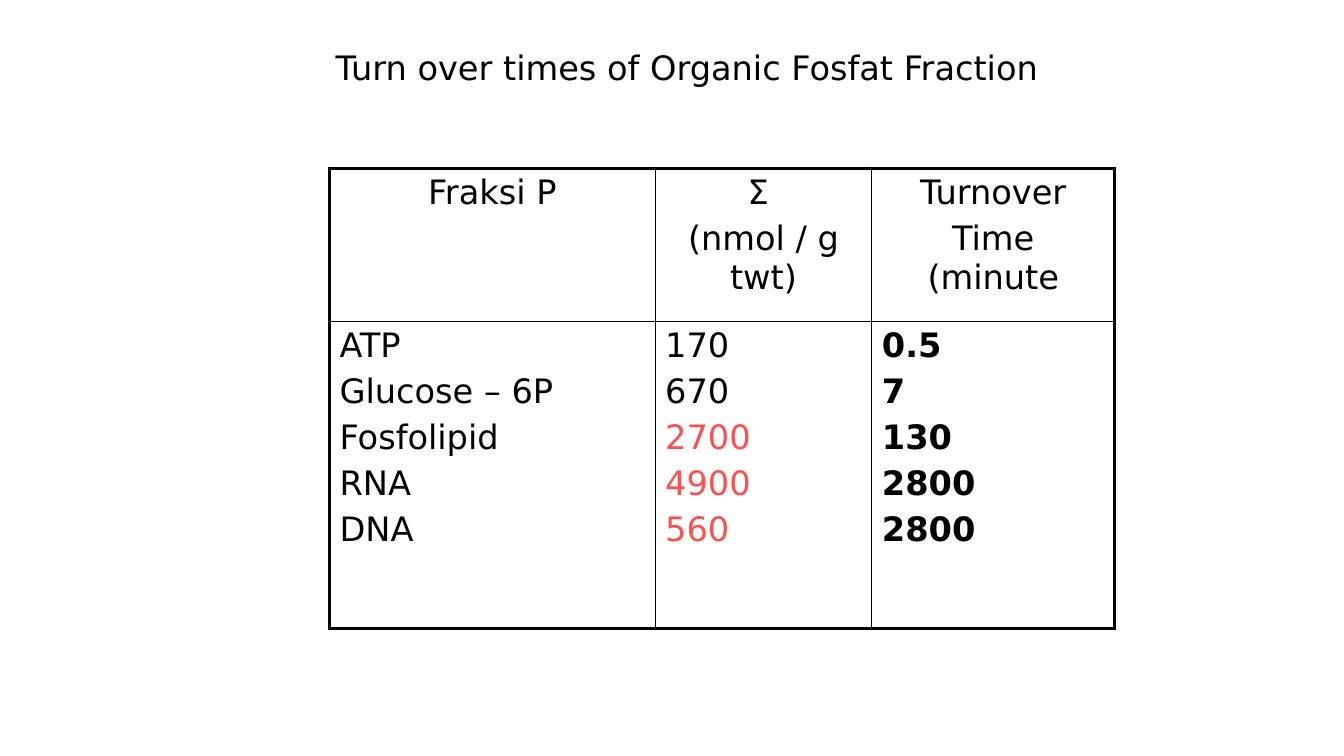
import pptx
import pptx.dml.color
import pptx.enum.text
import pptx.oxml.ns
import pptx.util
import lxml.etree

Pt = pptx.util.Pt
ALIGN = pptx.enum.text.PP_ALIGN
FONT = "DejaVu Sans"
BLACK, RED = "000000", "FF5050"
THIN, THICK = 1, 2.25
WIDTHS = [232.6, 154.8, 173.5]
HEIGHTS = [109.4, 219.6]
HEADS = [["Fraksi P"], ["Σ ", "(nmol / g twt)"], ["Turnover", "Time (minute"]]
ROWS = [
    ("ATP", "170", "0.5"),
    ("Glucose – 6P", "670", "7"),
    ("Fosfolipid", "2700", "130"),
    ("RNA", "4900", "2800"),
    ("DNA", "560", "2800"),
]


def color(code):
    """Turn a hex string into a colour."""
    return pptx.dml.color.RGBColor.from_string(code)


def add_run(para, text, code=BLACK, bold=False):
    """Add one styled run to a paragraph."""
    run = para.add_run()
    run.text = text
    run.font.name = FONT
    run.font.size = Pt(24)
    run.font.bold = bold
    run.font.color.rgb = color(code)


def add_title(slide, text, left, top, width, height):
    """Place and fill the title."""
    title = slide.shapes.title
    title.left, title.top = Pt(left), Pt(top)
    title.width, title.height = Pt(width), Pt(height)
    frame = title.text_frame
    frame.word_wrap = False
    frame.auto_size = pptx.enum.text.MSO_AUTO_SIZE.NONE
    frame.vertical_anchor = pptx.enum.text.MSO_ANCHOR.TOP
    frame.margin_left = Pt(79.2)
    para = frame.paragraphs[0]
    para.alignment = ALIGN.LEFT
    para.line_spacing = 1.0
    add_run(para, text)


def set_edges(cell, sides):
    """Draw the cell borders from a map of side to width."""
    props = cell._tc.get_or_add_tcPr()
    qn = pptx.oxml.ns.qn
    for spot, (side, width) in enumerate(sides.items()):
        line = lxml.etree.Element(qn("a:ln" + side), w=str(Pt(width)))
        fill = lxml.etree.SubElement(line, qn("a:solidFill"))
        lxml.etree.SubElement(fill, qn("a:srgbClr"), val=BLACK)
        props.insert(spot, line)


def fill_cell(cell, lines, align, bold=False):
    """Write (text, colour) lines into a cell, one paragraph each."""
    cell.fill.background()
    frame = cell.text_frame
    for spot, (text, code) in enumerate(lines):
        para = frame.add_paragraph() if spot else frame.paragraphs[0]
        para.alignment = align
        para.space_before = Pt(4.8 if spot else 0)
        add_run(para, text, code, bold)


def add_grid(slide, left, top):
    """Add the table of fractions."""
    shape = slide.shapes.add_table(
        2, 3, Pt(left), Pt(top), Pt(sum(WIDTHS)), Pt(sum(HEIGHTS)))
    table = shape.table
    table.first_row = table.horz_banding = False
    for row, height in zip(table.rows, HEIGHTS):
        row.height = Pt(height)
    for col, width in enumerate(WIDTHS):
        table.columns[col].width = Pt(width)
        head = [(text, BLACK) for text in HEADS[col]]
        body = [(row[col], RED if col == 1 and spot > 1 else BLACK)
                for spot, row in enumerate(ROWS)]
        fill_cell(table.cell(0, col), head, ALIGN.CENTER)
        fill_cell(table.cell(1, col), body, ALIGN.LEFT, col == 2)
        for row in range(2):
            set_edges(table.cell(row, col), {
                "L": THICK if col == 0 else THIN,
                "R": THICK if col == 2 else THIN,
                "T": THICK if row == 0 else THIN,
                "B": THICK if row == 1 else THIN,
            })


def main():
    """Build and save the slide."""
    deck = pptx.Presentation()
    deck.slide_width, deck.slide_height = Pt(960), Pt(540)
    slide = deck.slides.add_slide(deck.slide_layouts[5])
    add_title(slide, "Turn over times of Organic Fosfat Fraction",
              160.6, 30.2, 620, 65.5)
    add_grid(slide, 235.4, 120.2)
    deck.save("out.pptx")


if __name__ == "__main__":
    main()
